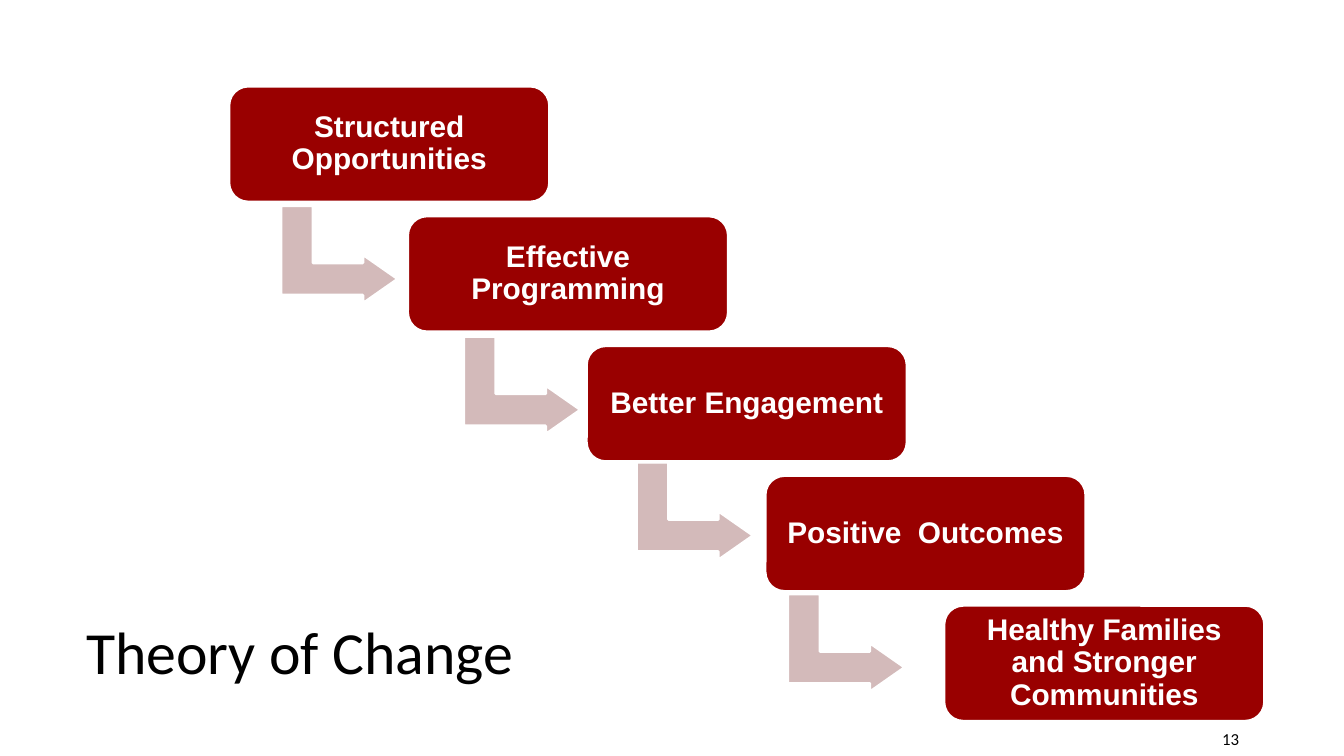
from dataclasses import dataclass
from typing import Optional

import pptx
import pptx.dml.color
import pptx.enum.shapes
import pptx.enum.text
import pptx.util

SHAPE = pptx.enum.shapes.MSO_SHAPE
ALIGN = pptx.enum.text.PP_ALIGN
ANCHOR = pptx.enum.text.MSO_ANCHOR

SLIDE_W = pptx.util.Inches(13.33)
SLIDE_H = pptx.util.Inches(7.5)

FIRST_LEFT, FIRST_TOP = 17.03, 11.4
STEP_X, STEP_Y = 13.3, 17.17
BOX_W, BOX_H = 23.86, 15.33
ARROW_W, ARROW_H = 7.28, 15.47


@dataclass(frozen=True)
class Area:
    left: float
    top: float
    width: float
    height: float

    def emu(self) -> tuple[int, int, int, int]:
        return (
            round(SLIDE_W * self.left / 100),
            round(SLIDE_H * self.top / 100),
            round(SLIDE_W * self.width / 100),
            round(SLIDE_H * self.height / 100),
        )


@dataclass(frozen=True)
class Step:
    text: str
    arrow_offset: Optional[tuple[float, float]] = None


@dataclass(frozen=True)
class TextStyle:
    font: str
    size: float
    color: str
    align: ALIGN
    anchor: ANCHOR
    inset: float
    bold: bool = False
    spacing: float = 1.0


TITLE = TextStyle("Calibri", 42.7, "000000", ALIGN.CENTER, ANCHOR.BOTTOM, 0.13, spacing=0.9)
NUMBER = TextStyle("Calibri", 12, "000000", ALIGN.RIGHT, ANCHOR.MIDDLE, 0.04)
LABEL = TextStyle("Arial", 21.3, "FFFFFF", ALIGN.CENTER, ANCHOR.MIDDLE, 0.09, True, 0.9)

STEPS = [
    Step("Structured Opportunities", (4.58, 14.53)),
    Step("Effective Programming", (4.88, 14.67)),
    Step("Better Engagement", (4.43, 14.13)),
    Step("Positive  Outcomes", (2.4, 14.4)),
    Step("Healthy Families and Stronger Communities"),
]


def rgb(value: str) -> pptx.dml.color.RGBColor:
    return pptx.dml.color.RGBColor.from_string(value)


def write(sp, text: str, style: TextStyle) -> None:
    tf = sp.text_frame
    tf.word_wrap = True
    tf.vertical_anchor = style.anchor
    inset = pptx.util.Inches(style.inset)
    tf.margin_left = tf.margin_right = tf.margin_top = tf.margin_bottom = inset
    p = tf.paragraphs[0]
    p.text = text
    p.alignment = style.align
    p.line_spacing = style.spacing
    p.font.name = style.font
    p.font.size = pptx.util.Pt(style.size)
    p.font.bold = style.bold
    p.font.color.rgb = rgb(style.color)


def add_text(s, area: Area, text: str, style: TextStyle) -> None:
    write(s.shapes.add_textbox(*area.emu()), text, style)


def add_block(s, kind: SHAPE, area: Area, fill: str, adjustments: list[float]):
    sp = s.shapes.add_shape(kind, *area.emu())
    sp.shadow.inherit = False
    sp.fill.solid()
    sp.fill.fore_color.rgb = rgb(fill)
    sp.line.color.rgb = rgb("FFFFFF")
    sp.line.width = pptx.util.Pt(2)
    for i, value in enumerate(adjustments):
        sp.adjustments[i] = value
    return sp


def add_step(s, index: int, step: Step) -> None:
    left = FIRST_LEFT + index * STEP_X
    top = FIRST_TOP + index * STEP_Y
    if step.arrow_offset:
        dx, dy = step.arrow_offset
        area = Area(left + dx, top + dy, ARROW_W, ARROW_H)
        arrow = add_block(s, SHAPE.BENT_UP_ARROW, area, "D3BABA", [0.328, 0.25, 0.358])
        arrow.rotation = 90
    area = Area(left, top, BOX_W, BOX_H)
    box = add_block(s, SHAPE.ROUNDED_RECTANGLE, area, "990000", [0.167])
    write(box, step.text, LABEL)


def main() -> None:
    prs = pptx.Presentation()
    prs.slide_width, prs.slide_height = SLIDE_W, SLIDE_H
    s = prs.slides.add_slide(prs.slide_layouts[6])
    add_text(s, Area(4.28, 80.53, 36.08, 12.13), "Theory of Change", TITLE)
    for index, step in enumerate(STEPS):
        add_step(s, index, step)
    add_text(s, Area(70.67, 95.87, 21.83, 3.73), "13", NUMBER)
    prs.save("out.pptx")


if __name__ == "__main__":
    main()
